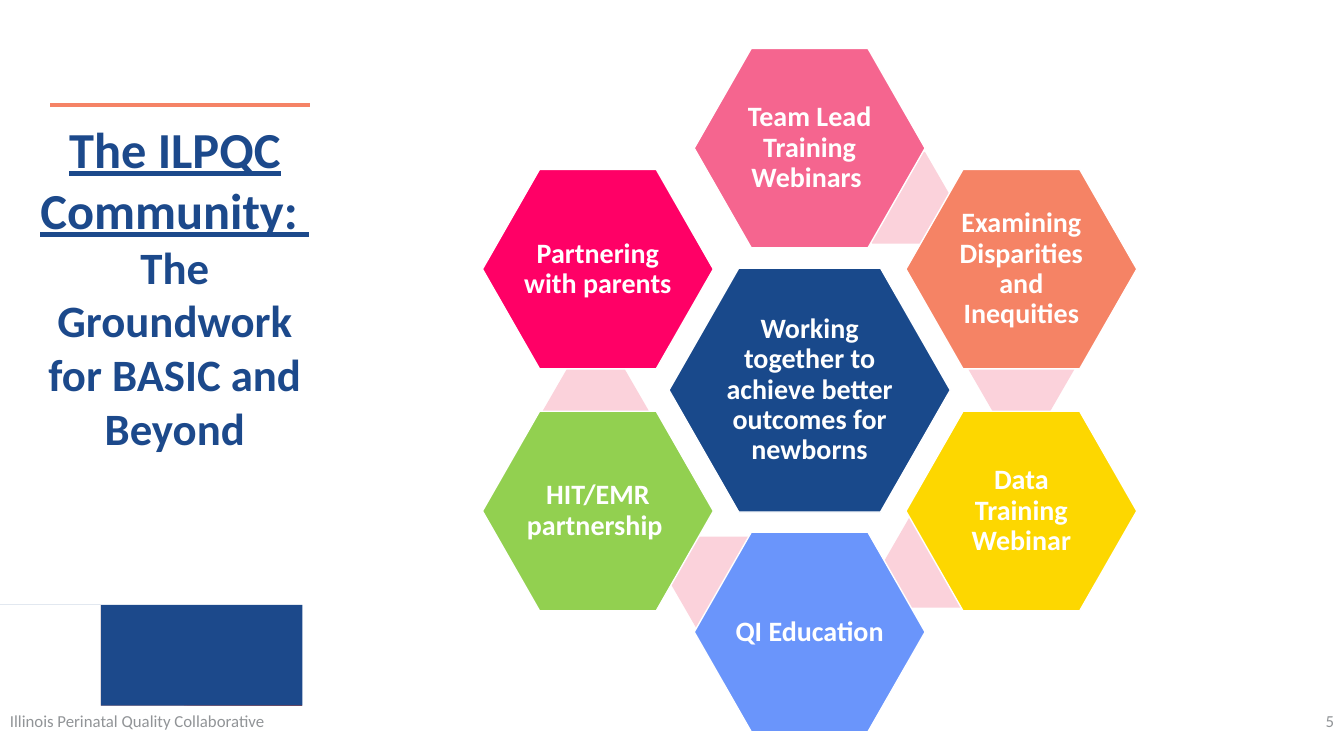
from dataclasses import dataclass

from lxml import etree
from pptx import Presentation
from pptx.dml.color import RGBColor
from pptx.enum.shapes import MSO_CONNECTOR, MSO_SHAPE
from pptx.enum.text import MSO_ANCHOR, MSO_AUTO_SIZE, PP_ALIGN
from pptx.oxml.ns import qn
from pptx.util import Inches, Pt

HEXAGON = MSO_SHAPE.HEXAGON
STRAIGHT = MSO_CONNECTOR.STRAIGHT
MIDDLE = MSO_ANCHOR.MIDDLE
NO_FIT = MSO_AUTO_SIZE.NONE
LEFT, CENTER, RIGHT = PP_ALIGN.LEFT, PP_ALIGN.CENTER, PP_ALIGN.RIGHT

COLORS = {
    "navy": "1C498B", "core": "19498B", "coral": "F58366", "red": "EF4114",
    "rose": "F5658F", "orange": "F58365", "yellow": "FDD700", "blue": "6A95FB",
    "green": "92D050", "magenta": "FF0066", "link": "FBD2DB",
    "white": "FFFFFF", "gray": "919497",
}
FONT = "Calibri"
SLIDE_W, SLIDE_H = 13.33, 7.5

# Hexagon ring: cells are counted in columns and rows from the centre
CENTER_X, CENTER_Y = 8.03, 3.87
COL, ROW = 2.1, 1.2
CORE_SIZE, CELL_SIZE, LINK_SIZE = (2.79, 2.42), (2.29, 1.98), (1.05, 0.91)


@dataclass
class Cell:
    col: float
    row: float
    color: str
    text: str = ""
    size: tuple[float, float] = CELL_SIZE


@dataclass
class Caption:
    left: float
    width: float
    align: PP_ALIGN
    text: str


CORE = Cell(0, 0, "core", "Working together to achieve better outcomes for newborns", CORE_SIZE)
LINKS = [Cell(col, row, "link", size=LINK_SIZE) for col, row in (
    (0.42, -1.59), (1, -0.17), (0.6, 1.42), (-0.41, 1.59), (-1.01, 0.17))]
RING = [
    Cell(0, -2, "rose", "Team Lead Training Webinars "),
    Cell(1, -1, "orange", "Examining Disparities and Inequities"),
    Cell(1, 1, "yellow", "Data Training Webinar"),
    Cell(0, 2, "blue", "QI Education"),
    Cell(-1, 1, "green", "HIT/EMR partnership "),
    Cell(-1, -1, "magenta", "Partnering with parents"),
]
CAPTIONS = [
    Caption(10.33, 3, RIGHT, "5"),
    Caption(0, 4.5, LEFT, "Illinois Perinatal Quality Collaborative"),
]

# Each wave is a list of steps: a point, or three points for a curve
CORAL_WAVE = [
    (0, 6.05), (0.47, 6.19), ((1.3, 6.41), (2.2, 6.48), (3.05, 6.31)), (3.07, 6.3),
    (3.07, 6.67), (2.84, 6.69), ((1.83, 6.76), (0.97, 6.57), (0.11, 6.29)), (0, 6.26),
]
NAVY_WAVE = [
    (0, 5.88), (0.31, 5.96), ((0.48, 6), (0.64, 6.03), (0.81, 6.06)),
    ((1.49, 6.18), (2.26, 6.16), (2.96, 5.99)), (3.07, 5.96),
    (3.07, 6.55), (2.85, 6.57), ((1.84, 6.66), (0.98, 6.48), (0.12, 6.22)), (0, 6.18),
]


def rgb(name: str) -> RGBColor:
    return RGBColor.from_string(COLORS[name])


def add_run(p, text: str, color: str, **formats) -> None:
    r = p.add_run()
    r.text = text
    r.font.color.rgb = rgb(color)
    for name, value in {"name": FONT, **formats}.items():
        setattr(r.font, name, value)


def format_frame(tf, inset_x: float, inset_y: float) -> None:
    formats = {
        "word_wrap": True, "auto_size": NO_FIT, "vertical_anchor": MIDDLE,
        "margin_left": Inches(inset_x), "margin_right": Inches(inset_x),
        "margin_top": Inches(inset_y), "margin_bottom": Inches(inset_y),
    }
    for name, value in formats.items():
        setattr(tf, name, value)


def add_cell(s, cell: Cell) -> None:
    w, h = cell.size
    x, y = CENTER_X + cell.col * COL, CENTER_Y + cell.row * ROW
    sp = s.shapes.add_shape(HEXAGON, Inches(x - w / 2), Inches(y - h / 2), Inches(w), Inches(h))
    sp.shadow.inherit = False
    sp.adjustments[0] = 0.286 if cell.text else 0.289
    sp.fill.solid()
    sp.fill.fore_color.rgb = rgb(cell.color)
    if not cell.text:
        sp.line.fill.background()
        return
    sp.line.color.rgb = rgb("white")
    sp.line.width = Pt(1)
    format_frame(sp.text_frame, 0.03, 0.03)
    p = sp.text_frame.paragraphs[0]
    p.alignment = CENTER
    p.line_spacing = 0.9
    add_run(p, cell.text, "white", size=Pt(20), bold=True)


def wave_points(steps: list, pieces: int = 16) -> list[tuple[float, float]]:
    """Turn each curve into short straight pieces."""
    points = []
    for step in steps:
        if not isinstance(step[0], tuple):
            points.append(step)
            continue
        controls = (points[-1], *step)
        for i in range(1, pieces + 1):
            t = i / pieces
            weights = ((1 - t) ** 3, 3 * t * (1 - t) ** 2, 3 * t * t * (1 - t), t ** 3)
            points.append(tuple(sum(k * c[axis] for k, c in zip(weights, controls))
                                for axis in (0, 1)))
    return points


def add_wave(s, steps: list):
    start, *rest = wave_points(steps)
    builder = s.shapes.build_freeform(*start, scale=Inches(1))
    builder.add_line_segments(rest, close=True)
    sp = builder.convert_to_shape()
    sp.shadow.inherit = False
    sp.line.fill.background()
    return sp


def add_waves(s) -> None:
    coral = add_wave(s, CORAL_WAVE).fill
    coral.gradient()
    coral.gradient_angle = 0
    for stop, position, color in zip(coral.gradient_stops, (0.6, 1), ("coral", "red")):
        stop.position = position
        stop.color.rgb = rgb(color)
    navy = add_wave(s, NAVY_WAVE).fill
    navy.solid()
    navy.fore_color.rgb = rgb("navy")


def add_rule(s) -> None:
    line = s.shapes.add_connector(STRAIGHT, Inches(0.5), Inches(1.04), Inches(3.07), Inches(1.04))
    line.line.color.rgb = rgb("coral")
    line.line.width = Pt(2.5)
    etree.SubElement(line._element.spPr, qn("a:effectLst"))


def fill_title(sp) -> None:
    sp.left, sp.top, sp.width, sp.height = map(Inches, (0.21, 0.79, 3.05, 4.1))
    format_frame(sp.text_frame, 0.1, 0.05)
    p = sp.text_frame.paragraphs[0]
    p.alignment = CENTER
    add_run(p, "The ILPQC Community: ", "navy", size=Pt(36), bold=True, underline=True)
    p.add_line_break()
    add_run(p, "The Groundwork for BASIC and Beyond", "navy", size=Pt(32), bold=True)


def add_caption(s, caption: Caption) -> None:
    sp = s.shapes.add_textbox(Inches(caption.left), Inches(6.95), Inches(caption.width), Inches(0.4))
    format_frame(sp.text_frame, 0.1, 0.05)
    p = sp.text_frame.paragraphs[0]
    p.alignment = caption.align
    add_run(p, caption.text, "gray", size=Pt(12))


def main() -> None:
    prs = Presentation()
    prs.slide_width, prs.slide_height = Inches(SLIDE_W), Inches(SLIDE_H)
    s = prs.slides.add_slide(prs.slide_layouts[5])
    add_rule(s)
    add_waves(s)
    fill_title(s.shapes.title)
    for caption in CAPTIONS:
        add_caption(s, caption)
    for cell in (CORE, *LINKS, *RING):
        add_cell(s, cell)
    prs.save("out.pptx")


if __name__ == "__main__":
    main()
